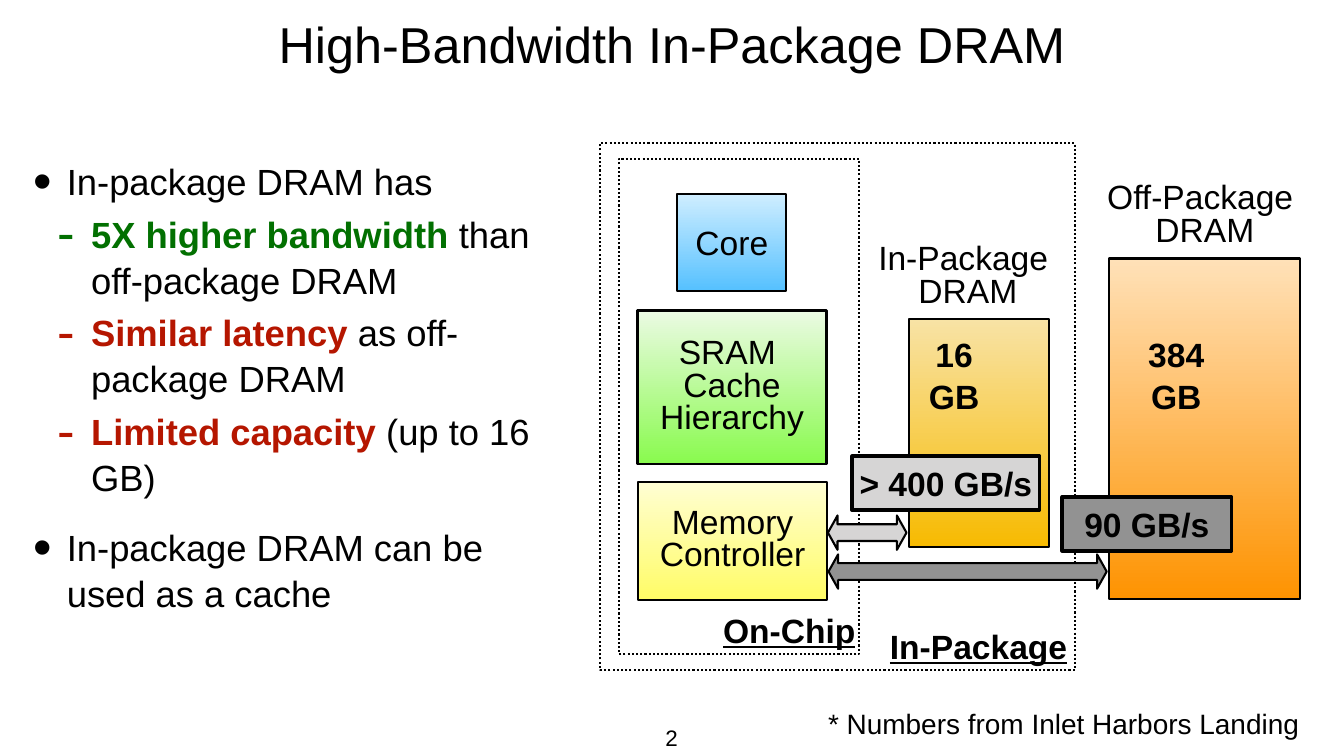
from lxml.etree import SubElement
from pptx import Presentation
from pptx.dml.color import RGBColor
from pptx.enum.dml import MSO_LINE as Dash
from pptx.enum.shapes import MSO_SHAPE as Shape
from pptx.enum.text import MSO_ANCHOR as Anchor, MSO_AUTO_SIZE as Fit, PP_ALIGN as Align
from pptx.oxml.ns import qn
from pptx.util import Cm, Pt

COLORS = {
    "black": "000000", "good": "027001", "bad": "B51600",
    "light": "D6D5D5", "dark": "929292",
    "core": ("CEEDFF", "56C1FF"), "cache": ("EBFAE3", "89FA4E"),
    "controller": ("FFFED3", "FFFC66"),
    "in_dram": ("F8E3A5", "F7BA01"), "off_dram": ("FFE1B8", "FE9301"),
}
INSET = 0.2
TIGHT = 0.8


def rgb(value):
    return RGBColor.from_string(value)


def place(shape, area):
    for name, value in zip(("left", "top", "width", "height"), area):
        setattr(shape, name, Cm(value))


def set_frame(shape, wrap=True, anchor=Anchor.MIDDLE, right=INSET):
    frame = shape.text_frame
    formats = {"auto_size": Fit.NONE, "word_wrap": wrap, "vertical_anchor": anchor,
               "margin_left": Cm(INSET), "margin_top": Cm(INSET),
               "margin_right": Cm(right), "margin_bottom": Cm(INSET)}
    for name, value in formats.items():
        setattr(frame, name, value)
    return frame


def add_span(para, text, size=48, color="black", **extra):
    span = para.add_run()
    span.text = text
    formats = {"name": "Arial", "size": Pt(size), **extra}
    for name, value in formats.items():
        setattr(span.font, name, value)
    span.font.color.rgb = rgb(COLORS[color])


def write(shape, lines, spacing=None, wrap=True, right=INSET, **font):
    """Put centred lines of text into a shape."""
    frame = set_frame(shape, wrap, right=right)
    for index, line in enumerate(lines):
        para = frame.add_paragraph() if index else frame.paragraphs[0]
        para.alignment = Align.CENTER
        if spacing:
            para.line_spacing = spacing
        add_span(para, line, **font)


def add_label(page, area, lines, wrap=False, **formats):
    box = page.shapes.add_textbox(*map(Cm, area))
    write(box, lines, wrap=wrap, **formats)


def add_block(page, area, fill=None, kind=Shape.RECTANGLE, line=3):
    """Add an outlined shape with a plain, gradient or empty fill."""
    block = page.shapes.add_shape(kind, *map(Cm, area))
    block.shadow.inherit = False
    block.line.color.rgb = rgb(COLORS["black"])
    block.line.width = Pt(line)
    if fill is None:
        block.fill.background()
    elif isinstance(COLORS[fill], tuple):
        block.fill.gradient()
        block.fill.gradient_angle = 270
        for stop, color in zip(block.fill.gradient_stops, COLORS[fill]):
            stop.color.rgb = rgb(color)
    else:
        block.fill.solid()
        block.fill.fore_color.rgb = rgb(COLORS[fill])
    return block


def add_boundary(page, area):
    add_block(page, area).line.dash_style = Dash.ROUND_DOT


def add_link(page, arrow_area, tag_area, fill, text):
    """Add a two-way arrow and the bandwidth tag above it."""
    arrow = add_block(page, arrow_area, fill, Shape.LEFT_RIGHT_ARROW)
    arrow.adjustments[0], arrow.adjustments[1] = 0.49, 0.28
    tag = add_block(page, tag_area, fill, line=5)
    write(tag, [text], bold=True)


def add_bullet(para, level, before, spans):
    para.level = level
    para.line_spacing = 1.05
    para.space_before = Pt(before)
    props = para._p.get_or_add_pPr()
    props.set("marL", str(Cm((1.7, 2.92)[level])))
    props.set("indent", str(-Cm(1.7)))
    for tag, key, value in (("a:buSzPct", "val", "145000"),
                            ("a:buFont", "typeface", "Arial"),
                            ("a:buChar", "char", "•-"[level])):
        SubElement(props, qn(tag)).set(key, value)
    for text, color, bold in spans:
        add_span(para, text, 52, color, bold=bold)


def fill_body(body):
    place(body, (1.47, 7.7, 27.18, 25.73))
    frame = set_frame(body, anchor=Anchor.TOP)
    bullets = [
        (0, 20, [("In-package DRAM has", "black", False)]),
        (1, 10, [("5X higher bandwidth", "good", True),
                 (" than off-package DRAM", "black", False)]),
        (1, 10, [("Similar latency", "bad", True),
                 (" as off-package DRAM", "black", False)]),
        (1, 10, [("Limited capacity", "bad", True),
                 (" (up to 16 GB)", "black", False)]),
        (0, 35, [("In-package DRAM can be used as a cache", "black", False)]),
    ]
    for index, bullet in enumerate(bullets):
        add_bullet(frame.add_paragraph() if index else frame.paragraphs[0], *bullet)


def draw_diagram(page):
    # Processor parts and memories
    core = add_block(page, (34.14, 9.8, 5.49, 4.85), "core")
    write(core, ["Core"])
    cache = add_block(page, (32.13, 15.65, 9.53, 7.75), "cache")
    write(cache, ["SRAM ", "Cache Hierarchy"], TIGHT)
    add_block(page, (45.8, 16.08, 7.09, 11.51), "in_dram")
    add_block(page, (55.91, 13.03, 9.6, 17.17), "off_dram")
    controller = add_block(page, (32.16, 24.28, 9.53, 5.97), "controller")
    write(controller, ["Memory Controller"], TIGHT)
    add_label(page, (43.64, 11.96, 10.29, 4.04), ["In-Package ", "DRAM"], spacing=TIGHT)
    add_label(page, (55.14, 8.89, 11.18, 4.04), ["Off-Package ", "DRAM"], spacing=TIGHT)

    # Chip and package boundaries
    add_boundary(page, (31.19, 8, 12.12, 24.97))
    add_label(page, (36.2, 30.56, 7.16, 2.39), ["On-Chip"], bold=True, underline=True)
    add_boundary(page, (30.25, 7.21, 23.93, 26.57))
    add_label(page, (44.5, 31.37, 9.65, 2.39), ["In-Package"], bold=True, underline=True)

    # Bandwidths and capacities
    add_link(page, (41.73, 25.98, 3.96, 1.73), (42.95, 22.99, 9.45, 2.72),
             "light", "> 400 GB/s")
    add_link(page, (41.76, 27.94, 14.02, 1.73), (53.54, 25.04, 8.53, 2.72),
             "dark", "90 GB/s")
    for left, width, right, text in ((57.61, 6.2, 3.05, "384 GB"),
                                     (46.56, 5.26, 2.4, "16 GB")):
        add_label(page, (left, 17.68, width, 2.39), [text], wrap=True,
                  right=right, spacing=1.04, bold=True)


def main():
    deck = Presentation()
    deck.slide_width, deck.slide_height = Cm(67.74), Cm(38.1)
    page = deck.slides.add_slide(deck.slide_layouts[1])

    # Title and list
    title, body = page.placeholders
    place(title, (3.94, -3.86, 59.87, 11.63))
    write(title, ["High-Bandwidth In-Package DRAM"], Pt(100), size=72)
    fill_body(body)

    draw_diagram(page)

    # Footnote and page number
    add_label(page, (41.58, 35.43, 24.05, 2.06),
              ["* Numbers from Inlet Harbors Landing"], size=40)
    add_label(page, (33.32, 36.32, 1.07, 1.75), ["2"], size=32)
    deck.save("out.pptx")


if __name__ == "__main__":
    main()
